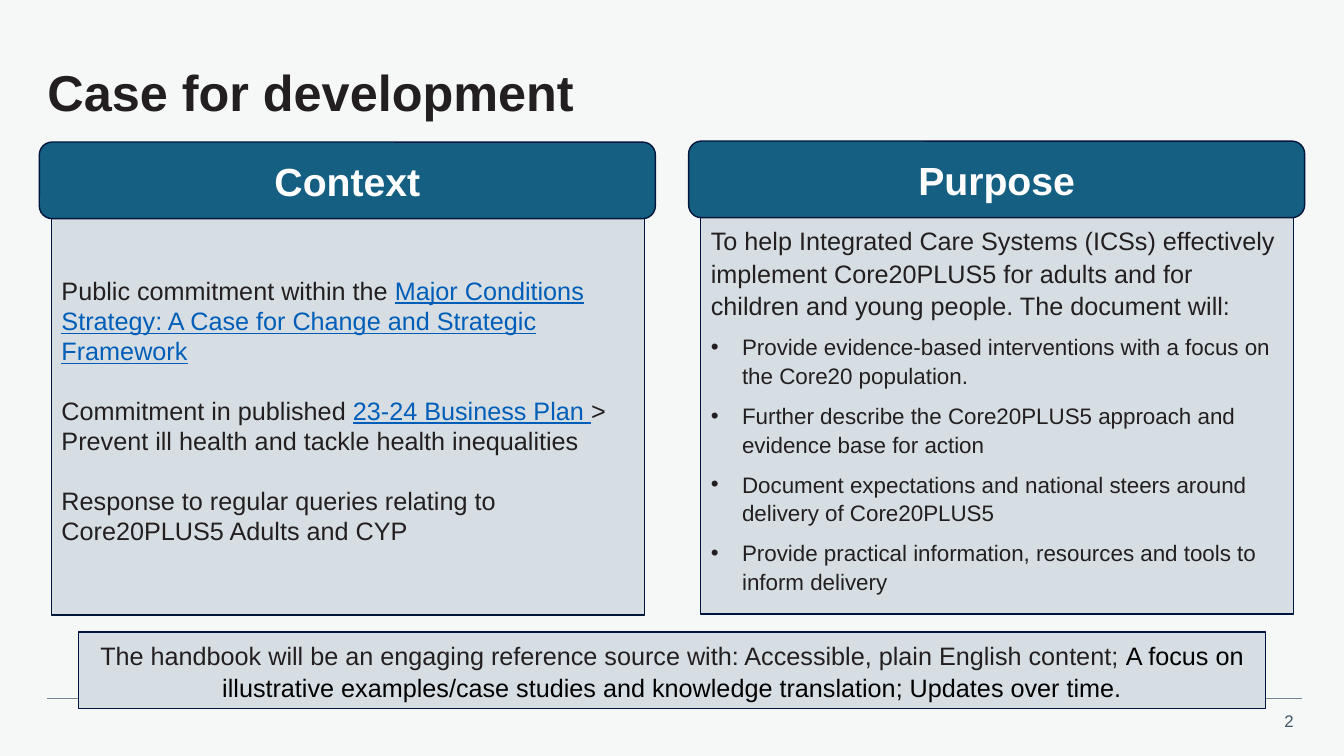
"""Build the "Case for development" slide."""
from lxml.etree import SubElement
from pptx import Presentation
from pptx.dml.color import RGBColor
from pptx.enum.shapes import MSO_CONNECTOR, MSO_SHAPE
from pptx.enum.text import MSO_ANCHOR, MSO_AUTO_SIZE, PP_ALIGN
from pptx.oxml.ns import qn
from pptx.util import Inches, Pt

BACKGROUND = RGBColor(0xF6, 0xF8, 0xF8)
PANEL = RGBColor(0xD6, 0xDE, 0xE3)
HEADER = RGBColor(0x15, 0x60, 0x82)
OUTLINE = RGBColor(0x00, 0x15, 0x3B)
RULE = RGBColor(0x76, 0x86, 0x92)
INK = RGBColor(0x23, 0x1F, 0x20)
BLACK = RGBColor(0, 0, 0)
WHITE = RGBColor(0xFF, 0xFF, 0xFF)
LINK = RGBColor(0x00, 0x5E, 0xB8)
NUMBER = RGBColor(0x42, 0x55, 0x63)

TITLE = "Case for development"
CONTEXT = [
    [("Public commitment within the ", INK),
     ("Major Conditions Strategy: A Case for Change and Strategic Framework", LINK)],
    [("Commitment in published ", INK), ("23-24 Business Plan ", LINK),
     ("> Prevent ill health and tackle health inequalities", INK)],
    [("Response to regular queries relating to Core20PLUS5 Adults and CYP", INK)],
]
PURPOSE_INTRO = (
    "To help Integrated Care Systems (ICSs) effectively implement Core20PLUS5 "
    "for adults and for children and young people. The document will:")
PURPOSE_POINTS = [
    "Provide evidence-based interventions with a focus on the Core20 population.",
    "Further describe the Core20PLUS5 approach and evidence base for action",
    "Document expectations and national steers around delivery of Core20PLUS5",
    "Provide practical information, resources and tools to inform delivery",
]
HANDBOOK = [
    ("The handbook will be an engaging reference source with: Accessible, "
     "plain English content; ", INK),
    ("A focus on illustrative examples/case studies and knowledge translation; "
     "Updates over time.", BLACK),
]
COLUMNS = [("Context", 0.39, 1.41), ("Purpose", 6.83, 1.4)]
HEADER_SIZE = (6.11, 0.76)
PANEL_SIZE = (5.88, 4.06)
PANEL_INDENT = 0.12
PANEL_DROP = 0.63


def place(shape, left, top, width, height):
    """Move and size a shape, in inches."""
    shape.left, shape.top = Inches(left), Inches(top)
    shape.width, shape.height = Inches(width), Inches(height)


def paint(shape, fill):
    """Give a shape its fill and the common outline."""
    shape.shadow.inherit = False
    shape.fill.solid()
    shape.fill.fore_color.rgb = fill
    shape.line.color.rgb = OUTLINE
    shape.line.width = Pt(1)


def write(shape, content, size=18, color=INK, bold=False, align=PP_ALIGN.LEFT,
          spacing=1, before=0, after=0, bullet=None):
    """Add one paragraph, from a string or from (text, colour) runs."""
    frame = shape.text_frame
    frame.word_wrap = True
    frame.auto_size = MSO_AUTO_SIZE.NONE
    frame.vertical_anchor = MSO_ANCHOR.MIDDLE
    first = frame.paragraphs[0]
    paragraph = frame.add_paragraph() if first.runs else first
    properties = paragraph._p.get_or_add_pPr()
    indent = Inches(0.31) if bullet else 0
    properties.set("marL", str(indent))
    properties.set("indent", str(-indent))
    if bullet:
        SubElement(properties, qn("a:buChar"), char=bullet)
    else:
        SubElement(properties, qn("a:buNone"))
    paragraph.alignment = align
    paragraph.line_spacing = spacing
    paragraph.space_before, paragraph.space_after = Pt(before), Pt(after)
    runs = [(content, color)] if isinstance(content, str) else content
    for text, run_color in runs:
        run = paragraph.add_run()
        run.text = text
        run.font.name, run.font.size, run.font.bold = "Arial", Pt(size), bold
        run.font.color.rgb = run_color
        run.font.underline = run_color == LINK


def add_box(slide, kind, fill, *bounds):
    """Add a painted preset shape."""
    box = slide.shapes.add_shape(kind, *map(Inches, bounds))
    paint(box, fill)
    return box


def main():
    """Assemble and save the slide."""
    presentation = Presentation()
    presentation.slide_width, presentation.slide_height = Inches(13.33), Inches(7.5)
    slide = presentation.slides.add_slide(presentation.slide_layouts[3])
    slide.background.fill.solid()
    slide.background.fill.fore_color.rgb = BACKGROUND
    title, context, purpose = slide.placeholders

    place(title, 0.47, 0.47, 12.47, 0.95)
    write(title, TITLE, size=36, bold=True, spacing=0.9)
    frame = title.text_frame
    frame.margin_left = frame.margin_right = frame.margin_top = frame.margin_bottom = 0

    for panel, (heading, left, top) in zip((context, purpose), COLUMNS):
        place(panel, left + PANEL_INDENT, top + PANEL_DROP, *PANEL_SIZE)
        paint(panel, PANEL)
        header = add_box(slide, MSO_SHAPE.ROUNDED_RECTANGLE, HEADER, left, top, *HEADER_SIZE)
        write(header, heading, size=28, color=WHITE, bold=True, align=PP_ALIGN.CENTER)

    for index, runs in enumerate(CONTEXT):
        write(context, runs, before=21 if index else 0)
    write(purpose, PURPOSE_INTRO, spacing=1.07, after=8)
    for point in PURPOSE_POINTS:
        write(purpose, point, size=16, spacing=1.07, after=8, bullet="•")

    rule = slide.shapes.add_connector(
        MSO_CONNECTOR.STRAIGHT, Inches(0.47), Inches(6.93), Inches(12.91), Inches(6.93))
    rule.line.color.rgb = RULE
    rule.line.width = Pt(0.5)
    SubElement(rule._element.spPr, qn("a:effectLst"))

    handbook = add_box(slide, MSO_SHAPE.RECTANGLE, PANEL, 0.78, 6.27, 11.77, 0.76)
    write(handbook, HANDBOOK, align=PP_ALIGN.CENTER, spacing=1.07, after=8)

    number = slide.shapes.add_textbox(Inches(12.52), Inches(7), Inches(0.41), Inches(0.3))
    write(number, "2", size=12, color=NUMBER, align=PP_ALIGN.RIGHT)

    presentation.save("out.pptx")


if __name__ == "__main__":
    main()
